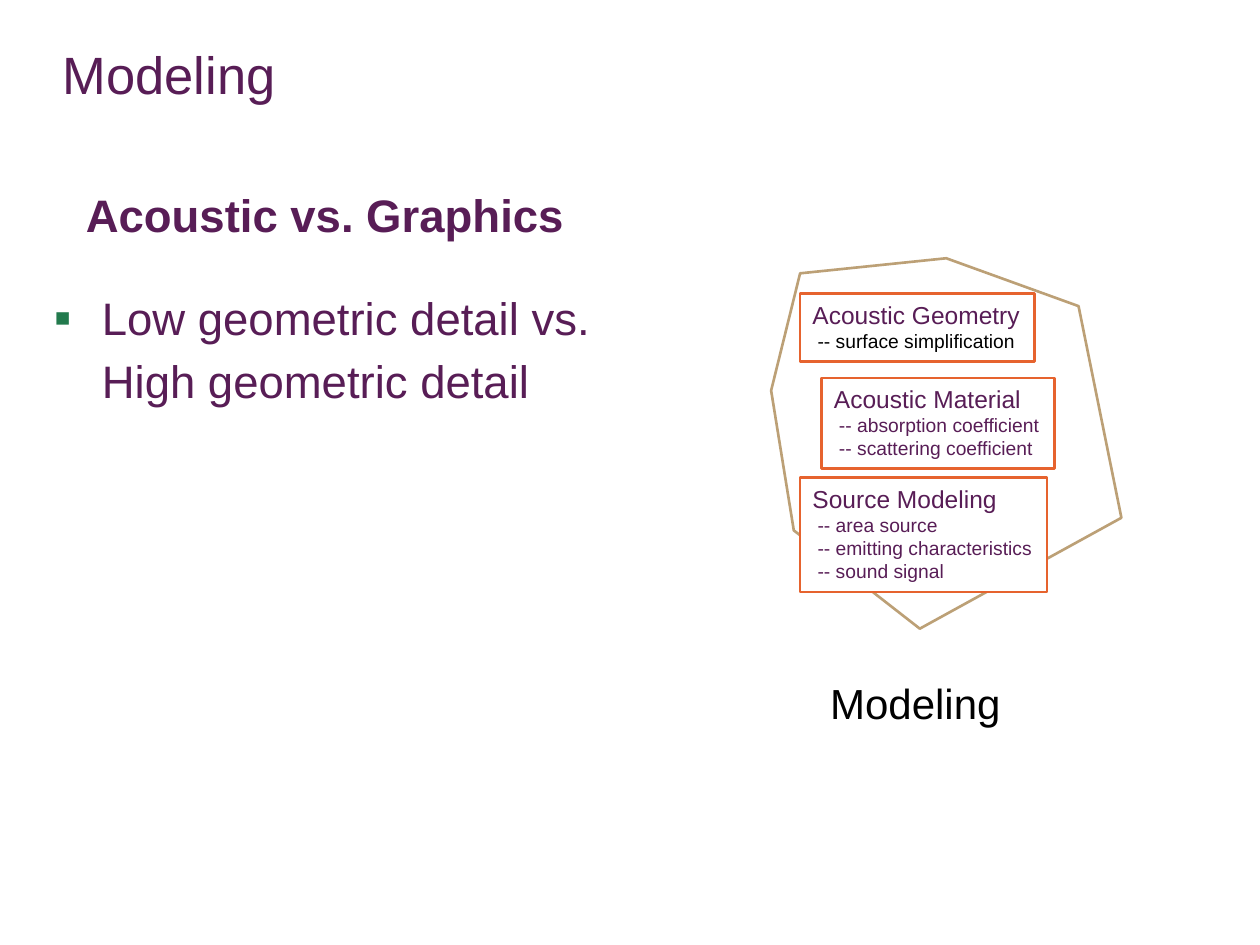
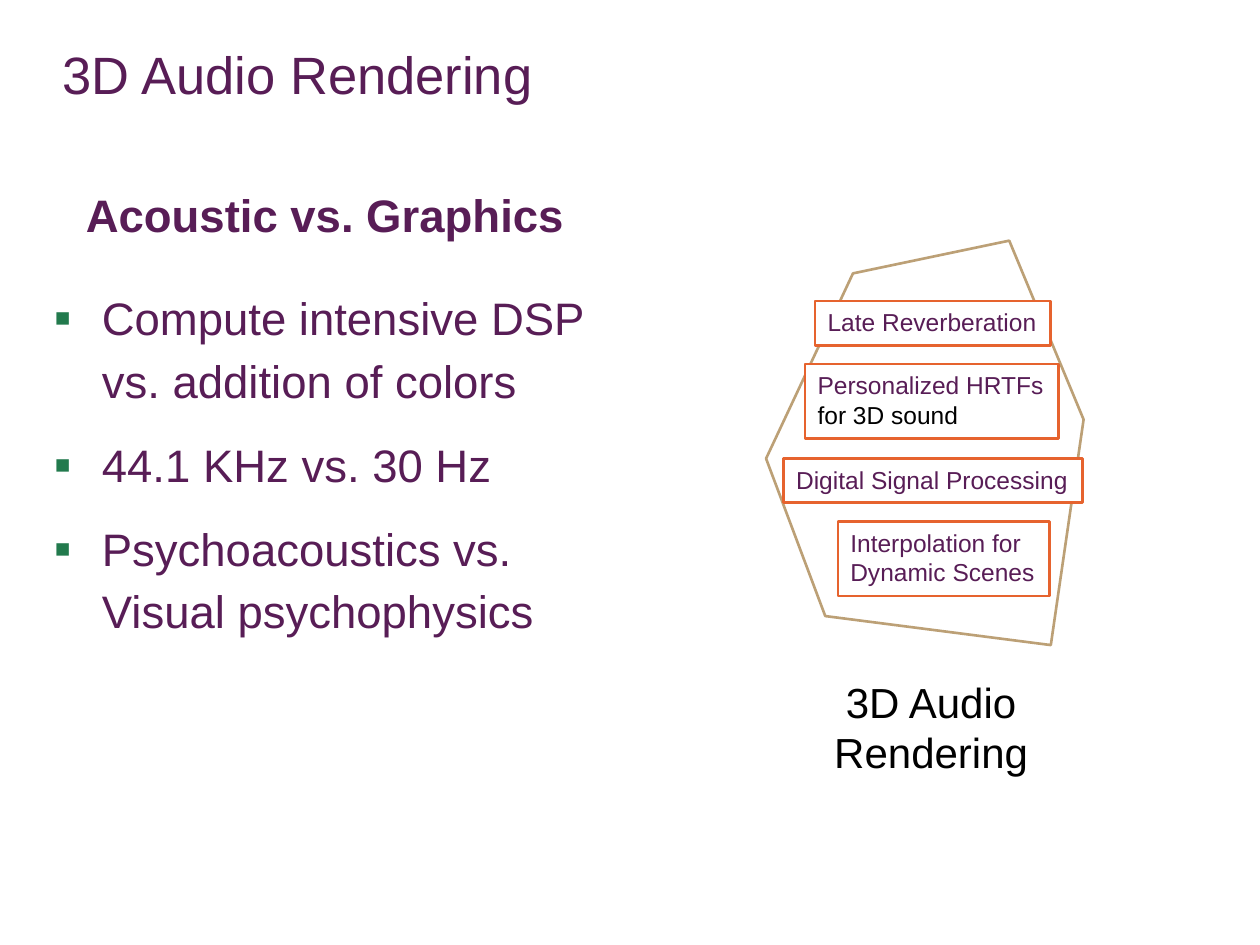
from lxml.etree import SubElement
from pptx import Presentation
from pptx.dml.color import RGBColor
from pptx.enum.shapes import MSO_SHAPE
from pptx.enum.text import MSO_ANCHOR, MSO_AUTO_SIZE, PP_ALIGN
from pptx.oxml.ns import qn
from pptx.util import Inches, Pt

# Shared look
FONT = "Arial"
HEX = {"plum": "581D56", "black": "000000", "white": "FFFFFF",
       "green": "227A4D", "tan": "BCA076", "orange": "E6632E"}
HEAD = "Acoustic vs. Graphics"

# Content: a label is (place, lines), a line is (text, size, colour)
SLIDES = [
    {
        "title": "Modeling",
        "points": ["Low geometric detail vs. High geometric detail"],
        "caption": ((6.49, 5.33, 1.56, 0.5), ["Modeling"], PP_ALIGN.LEFT),
        "outline": [(7.51, 2.05), (6.35, 2.17), (6.12, 3.1), (6.3, 4.21),
                    (7.3, 4.99), (8.9, 4.11), (8.56, 2.43)],
        "labels": [
            ((6.35, 2.33, 1.86, 0.54),
             [("Acoustic Geometry", 14, "plum"),
              ("-- surface simplification", 11, "black")]),
            ((6.52, 3, 1.85, 0.72),
             [("Acoustic Material", 14, "plum"),
              ("-- absorption coefficient", 11, "plum"),
              ("-- scattering coefficient", 11, "plum")]),
            ((6.35, 3.79, 1.96, 0.91),
             [("Source Modeling", 14, "plum"),
              ("-- area source", 11, "plum"),
              ("-- emitting characteristics", 11, "plum"),
              ("-- sound signal", 11, "plum")]),
        ],
    },
    {
        "title": "3D Audio Rendering",
        "points": ["Compute intensive DSP vs. addition of colors",
                   "44.1 KHz vs. 30 Hz",
                   "Psychoacoustics vs. Visual psychophysics"],
        "caption": ((6.52, 5.32, 1.74, 0.9), ["3D Audio", "Rendering"],
                    PP_ALIGN.CENTER),
        "outline": [(8.01, 1.91), (6.77, 2.17), (6.08, 3.64), (6.55, 4.89),
                    (8.34, 5.12), (8.6, 3.33)],
        "labels": [
            ((6.47, 2.39, 1.87, 0.35), [("Late Reverberation", 14, "plum")]),
            ((6.39, 2.89, 2.01, 0.59),
             [("Personalized HRTFs", 14, "plum"),
              ("for 3D sound", 14, "black")]),
            ((6.22, 3.64, 2.37, 0.35),
             [("Digital Signal Processing", 14, "plum")]),
            ((6.65, 4.14, 1.68, 0.59),
             [("Interpolation for", 14, "plum"),
              ("Dynamic Scenes", 14, "plum")]),
        ],
    },
]


def rgb(name):
    return RGBColor.from_string(HEX[name])


def indent(para, left, first=0):
    props = para._p.get_or_add_pPr()
    props.set("marL", str(Inches(left)))
    props.set("indent", str(Inches(first)))
    return props


def bullet(para):
    props = indent(para, 0.38, -0.38)
    color = SubElement(props, qn("a:buClr"))
    SubElement(color, qn("a:srgbClr"), val=HEX["green"])
    SubElement(props, qn("a:buSzPct"), val="110000")
    SubElement(props, qn("a:buFont"), typeface=FONT)
    SubElement(props, qn("a:buChar"), char="▪")


def write(frame, lines, align=PP_ALIGN.LEFT, bold=False, loose=False,
          marks=False):
    """Fill a frame with one paragraph per (text, size, colour) line."""
    for i, (text, size, color) in enumerate(lines):
        para = frame.add_paragraph() if i else frame.paragraphs[0]
        if marks:
            bullet(para)
        elif text.startswith("--"):
            indent(para, 0.04)
        para.alignment = align
        if loose:
            para.line_spacing = 1.15
            para.space_before = Pt(6 if i else 0)
            para.space_after = Pt(6)
        run = para.add_run()
        run.text = text
        run.font.name = FONT
        run.font.size = Pt(size)
        run.font.bold = bold
        run.font.color.rgb = rgb(color)


def add_text(slide, place, lines, wrap=True, **style):
    frame = slide.shapes.add_textbox(*map(Inches, place)).text_frame
    frame.word_wrap = wrap
    write(frame, lines, **style)
    return frame


def paint(shape, line):
    shape.shadow.inherit = False
    shape.fill.solid()
    shape.fill.fore_color.rgb = rgb("white")
    shape.line.color.rgb = rgb(line)
    shape.line.width = Pt(1.5)


def add_outline(slide, dots):
    dots = [(Inches(x), Inches(y)) for x, y in dots]
    pen = slide.shapes.build_freeform(*dots[0])
    pen.add_line_segments(dots[1:], close=True)
    paint(pen.convert_to_shape(), "tan")


def add_label(slide, place, lines):
    box = slide.shapes.add_shape(MSO_SHAPE.RECTANGLE, *map(Inches, place))
    paint(box, "orange")
    frame = box.text_frame
    frame.word_wrap = False
    frame.auto_size = MSO_AUTO_SIZE.SHAPE_TO_FIT_TEXT
    frame.vertical_anchor = MSO_ANCHOR.TOP
    write(frame, lines)


def build(deck, data):
    slide = deck.slides.add_slide(deck.slide_layouts[6])
    # Title, heading and bullet points
    title = add_text(slide, (0.4, 0.28, 8.67, 0.6),
                     [(data["title"], 30, "plum")])
    title.vertical_anchor = MSO_ANCHOR.MIDDLE
    add_text(slide, (0.33, 2.19, 4.52, 4.81),
             [(text, 26, "plum") for text in data["points"]],
             loose=True, marks=True)
    add_text(slide, (0.32, 1.37, 4.52, 0.64), [(HEAD, 26, "plum")],
             align=PP_ALIGN.CENTER, bold=True, loose=True)
    # Diagram: caption, outline and labels
    place, lines, align = data["caption"]
    add_text(slide, place, [(text, 24, "black") for text in lines],
             wrap=False, align=align)
    add_outline(slide, data["outline"])
    for place, lines in data["labels"]:
        add_label(slide, place, lines)


def main():
    deck = Presentation()
    deck.slide_width, deck.slide_height = Inches(10), Inches(7.5)
    for data in SLIDES:
        build(deck, data)
    deck.save("out.pptx")


if __name__ == "__main__":
    main()
